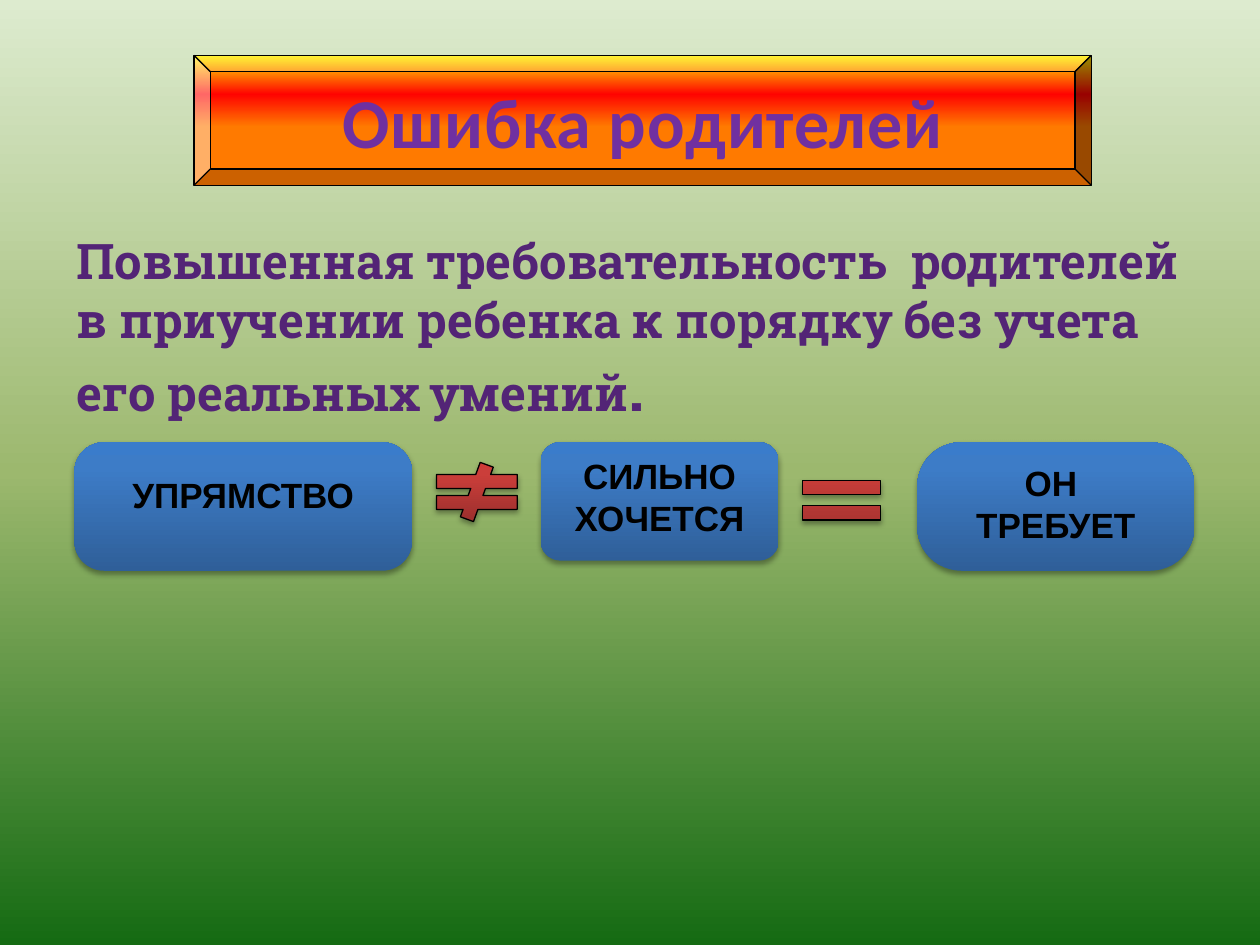
from dataclasses import dataclass

from lxml.etree import SubElement
from pptx import Presentation
from pptx.dml.color import RGBColor
from pptx.enum.shapes import MSO_SHAPE as Preset
from pptx.enum.text import MSO_ANCHOR as Anchor, MSO_AUTO_SIZE as AutoSize, PP_ALIGN as Align
from pptx.oxml.ns import qn
from pptx.util import Inches, Pt

COLORS = {
    "black": "000000",
    "title": "7030A0",
    "body": "532476",
    "body_outline": "467AB8",
}
GRADIENTS = {
    "page": [(0, "DDEBCF"), (50, "9CB86E"), (100, "156B13")],
    "title": [(45, "FF7A00"), (70, "FF0300"), (100, "FFF200"), (100, "4D0808")],
    "card": [(0, "2F5F99"), (80, "3D7CC7"), (100, "3A7CCB")],
    "sign": [(0, "9C2F2D"), (80, "CB3E3A"), (100, "CE3B37")],
}
UPWARD, DOWNWARD = 90, 270
ROW_TOP = 3.51


@dataclass
class Card:
    lines: list[str]
    left: float
    width: float
    height: float
    rounding: float
    margin_top: float = 0.05


@dataclass
class Sign:
    preset: Preset
    left: float
    top: float
    width: float
    height: float
    adjustments: tuple[float, ...] = ()


CARDS = [
    Card(["УПРЯМСТВО"], 0.59, 2.68, 1.02, 0.232, margin_top=0.18),
    Card(["СИЛЬНО ХОЧЕТСЯ"], 4.29, 1.89, 0.94, 0.167),
    Card(["ОН ", "ТРЕБУЕТ"], 7.28, 2.2, 1.02, 0.343),
]
SIGNS = [
    Sign(Preset.MATH_NOT_EQUAL, 3.35, 3.67, 0.87, 0.47),
    Sign(Preset.MATH_EQUAL, 6.26, 3.59, 0.84, 0.76, (0.149, 0.118)),
]


def apply_gradient(fill, element, name: str, angle: int) -> None:
    fill.gradient()
    fill.gradient_angle = angle
    stops = next(element.iter(qn("a:gsLst")))
    for stop in list(stops):
        stops.remove(stop)
    for position, color in GRADIENTS[name]:
        stop = SubElement(stops, qn("a:gs"), pos=str(position * 1000))
        SubElement(stop, qn("a:srgbClr"), val=color)


def add_shadow(shape) -> None:
    effects = shape.element.spPr.find(qn("a:effectLst"))
    shadow = SubElement(effects, qn("a:outerShdw"), blurRad=str(Pt(3.1)),
                        dist=str(Pt(1.8)), dir="5400000", rotWithShape="0")
    color = SubElement(shadow, qn("a:srgbClr"), val=COLORS["black"])
    SubElement(color, qn("a:alpha"), val="35000")


def add_gradient_shape(page, preset: Preset, left: float, top: float, width: float,
                       height: float, gradient: str, *, outlined: bool = False,
                       shadowed: bool = True, adjustments: tuple[float, ...] = ()):
    shape = page.shapes.add_shape(preset, Inches(left), Inches(top),
                                  Inches(width), Inches(height))
    for index, value in enumerate(adjustments):
        shape.adjustments[index] = value
    apply_gradient(shape.fill, shape.element, gradient, UPWARD)
    if outlined:
        shape.line.color.rgb = RGBColor.from_string(COLORS["black"])
        shape.line.width = Pt(0.75)
    else:
        shape.line.fill.background()
    shape.shadow.inherit = False
    if shadowed:
        add_shadow(shape)
    return shape


def add_span(para, text: str, *, size: float, font: str, color: str,
             spacing: float = 0, outline: str = "") -> None:
    span = para.add_run()
    span.text = text
    span.font.size = Pt(size)
    span.font.name = font
    span.font.bold = True
    span.font.color.rgb = RGBColor.from_string(COLORS[color])
    properties = span.font._element
    if spacing:
        properties.set("spc", str(round(spacing * 100)))
    if outline:
        line = SubElement(properties, qn("a:ln"), w=str(Pt(0.83)))
        properties.insert(0, line)
        fill = SubElement(line, qn("a:solidFill"))
        SubElement(fill, qn("a:srgbClr"), val=COLORS[outline])


def add_title(page) -> None:
    box = add_gradient_shape(page, Preset.BEVEL, 1.54, 0.44, 7.12, 1.03, "title",
                             outlined=True, shadowed=False)
    frame = box.text_frame
    frame.auto_size = AutoSize.SHAPE_TO_FIT_TEXT
    frame.vertical_anchor = Anchor.MIDDLE
    para = frame.paragraphs[0]
    para.alignment = Align.CENTER
    add_span(para, "Ошибка родителей", size=40, font="Calibri", color="title", spacing=0.5)


def add_statement(page) -> None:
    box = page.shapes.add_textbox(Inches(0.51), Inches(1.78), Inches(9.13), Inches(1.65))
    frame = box.text_frame
    frame.word_wrap = True
    frame.auto_size = AutoSize.SHAPE_TO_FIT_TEXT
    para = frame.paragraphs[0]
    statement = ("Повышенная требовательность  родителей в приучении ребенка "
                 "к порядку без учета его реальных умений")
    for text, size in ((statement, 28), (".", 36)):
        add_span(para, text, size=size, font="Roboto Slab", color="body",
                 outline="body_outline")


def add_card(page, card: Card) -> None:
    box = add_gradient_shape(page, Preset.ROUNDED_RECTANGLE, card.left, ROW_TOP, card.width,
                             card.height, "card", adjustments=(card.rounding,))
    frame = box.text_frame
    frame.word_wrap = True
    frame.vertical_anchor = Anchor.TOP
    frame.margin_top = Inches(card.margin_top)
    for index, line in enumerate(card.lines):
        para = frame.add_paragraph() if index else frame.paragraphs[0]
        para.alignment = Align.CENTER
        add_span(para, line, size=20, font="Arial", color="black")


def add_sign(page, sign: Sign) -> None:
    add_gradient_shape(page, sign.preset, sign.left, sign.top, sign.width, sign.height,
                       "sign", outlined=True, adjustments=sign.adjustments)


def main() -> None:
    deck = Presentation()
    deck.slide_width, deck.slide_height = Inches(10), Inches(7.5)
    page = deck.slides.add_slide(deck.slide_layouts[6])
    apply_gradient(page.background.fill, page.element, "page", DOWNWARD)
    add_title(page)
    add_statement(page)
    for card in CARDS:
        add_card(page, card)
    for sign in SIGNS:
        add_sign(page, sign)
    deck.save("out.pptx")


if __name__ == "__main__":
    main()
